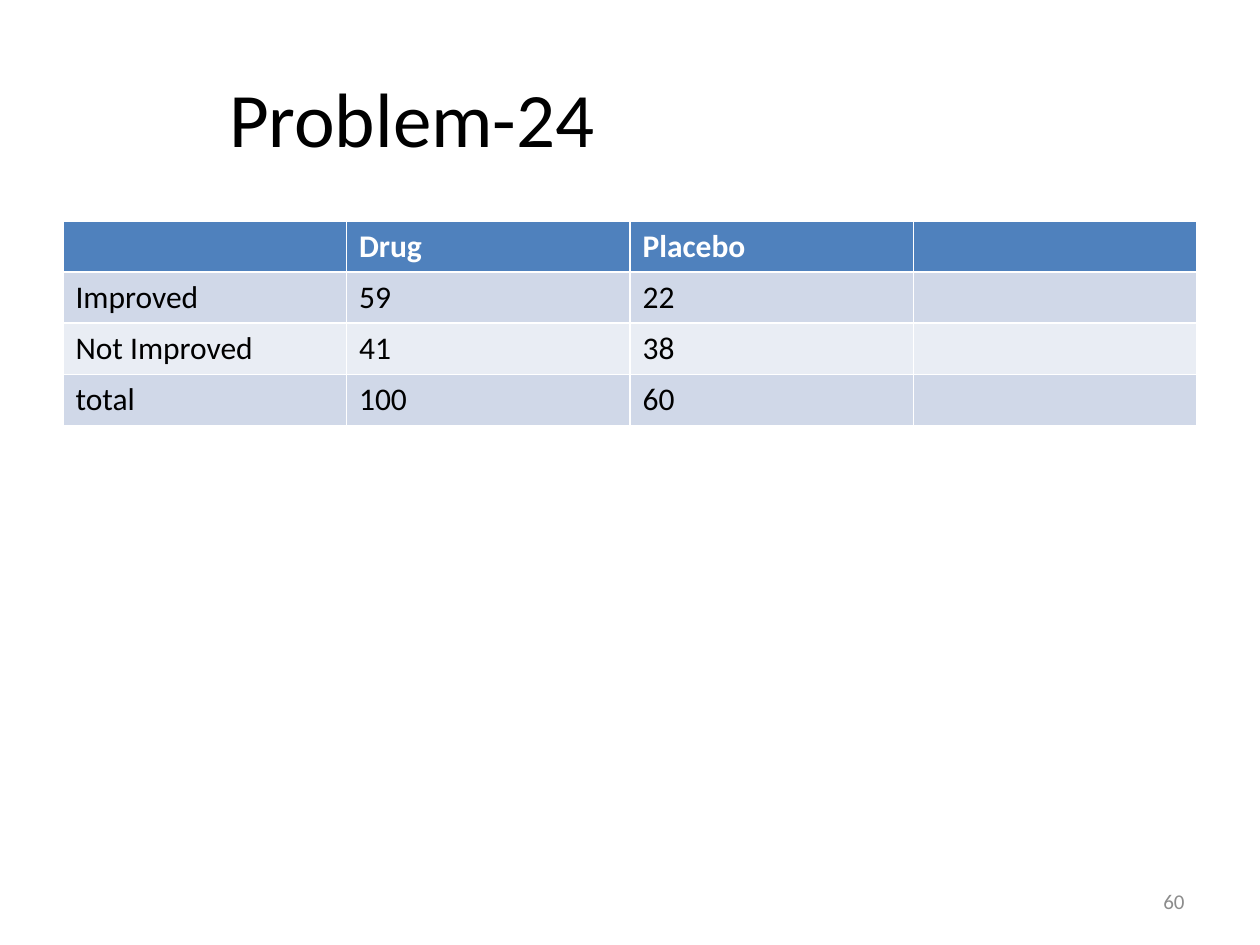
from pptx import Presentation
from pptx.dml.color import RGBColor
from pptx.enum.text import MSO_ANCHOR, PP_ALIGN
from pptx.util import Pt

SCALE = 914400 / 126
COLORS = {"head": "4F81BD", "odd": "D0D8E8", "even": "E9EDF4",
          "white": "FFFFFF", "black": "000000", "gray": "8C8C8C"}


def px(*sizes):
    return [round(size * SCALE) for size in sizes]


def style(part, size, color, bold=False):
    look = {"name": "Calibri", "size": Pt(size), "bold": bold}
    for key, value in look.items():
        setattr(part.font, key, value)
    part.font.color.rgb = RGBColor.from_string(COLORS[color])


deck = Presentation()
deck.slide_width, deck.slide_height = px(1260, 945)
slide = deck.slides.add_slide(deck.slide_layouts[5])

title = slide.shapes.title
title.left, title.top, title.width, title.height = px(63, 38, 1134, 158)
frame = title.text_frame
frame.text = "Problem-24"
frame.vertical_anchor = MSO_ANCHOR.MIDDLE
frame.margin_left, frame.margin_right = px(13, 449)
line = frame.paragraphs[0]
line.alignment = PP_ALIGN.CENTER
style(line.runs[0], 44, "black")

rows = [
    ["", "Drug", "Placebo", ""],
    ["Improved", "59", "22", ""],
    ["Not Improved", "41", "38", ""],
    ["total", "100", "60", ""],
]
fills = ["head", "odd", "even", "odd"]
table = slide.shapes.add_table(4, 4, *px(63, 221, 1134, 204)).table
for r, row in enumerate(rows):
    for c, text in enumerate(row):
        cell = table.cell(r, c)
        cell.fill.solid()
        cell.fill.fore_color.rgb = RGBColor.from_string(COLORS[fills[r]])
        cell.text = text
        style(cell.text_frame.paragraphs[0], 18, "black" if r else "white", r == 0)
        for run in cell.text_frame.paragraphs[0].runs:
            style(run, 18, "black" if r else "white", r == 0)

number = slide.shapes.add_textbox(*px(903, 876, 294, 50)).text_frame
number.word_wrap = True
number.vertical_anchor = MSO_ANCHOR.MIDDLE
number.text = "60"
line = number.paragraphs[0]
line.alignment = PP_ALIGN.RIGHT
style(line.runs[0], 12, "gray")

deck.save("out.pptx")
